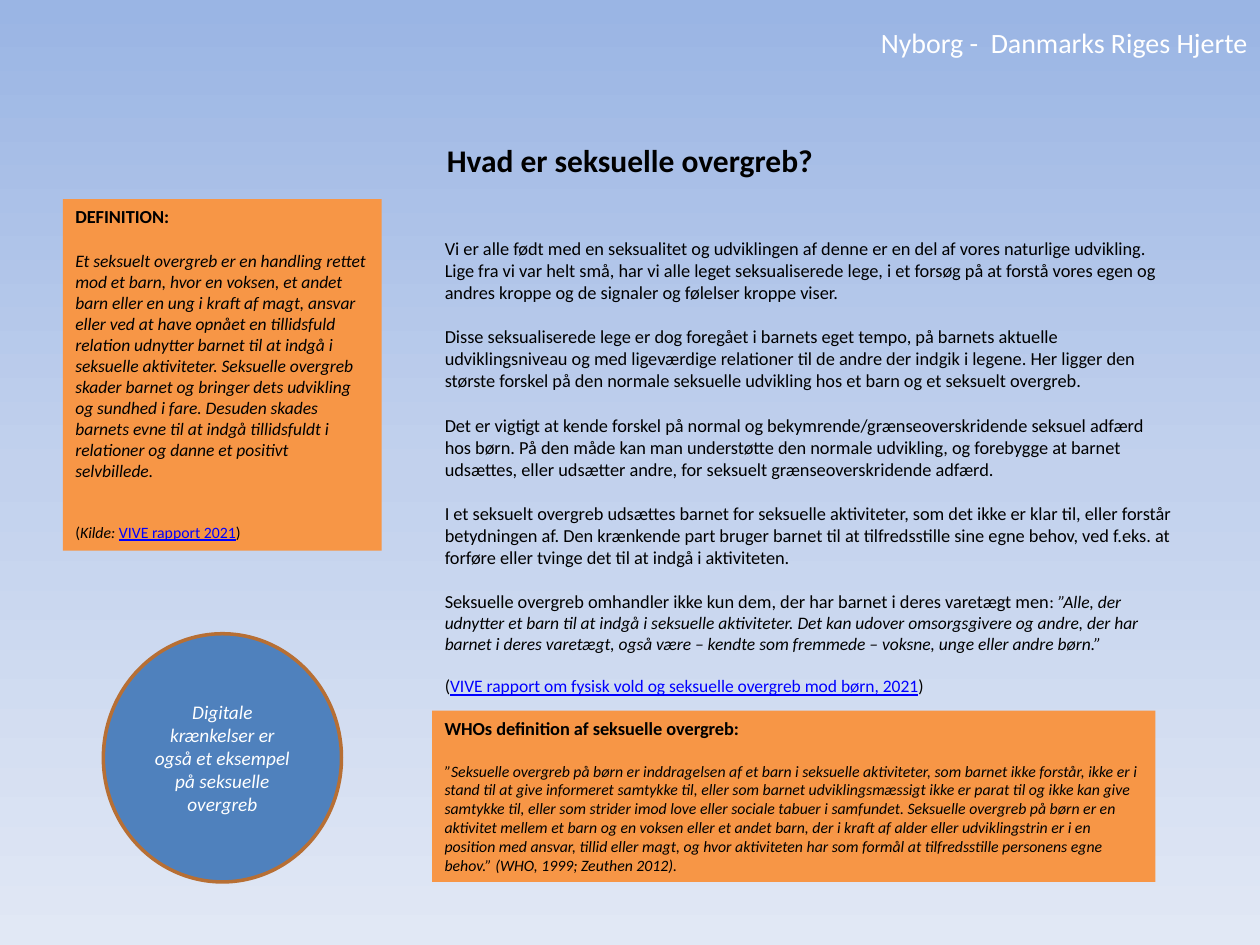
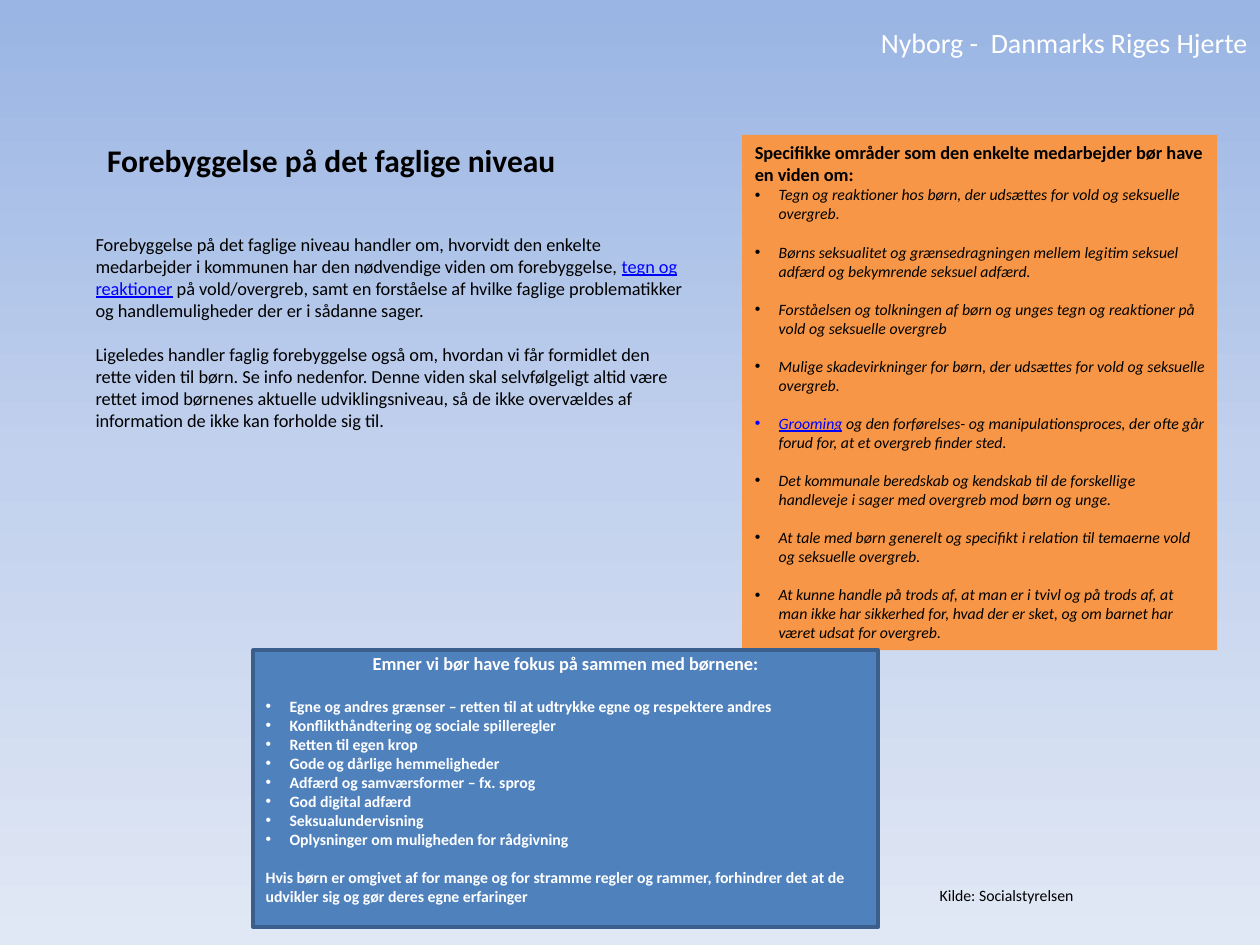
from copy import deepcopy

from pptx import Presentation
from pptx.dml.color import RGBColor
from pptx.enum.shapes import MSO_SHAPE as SHAPE
from pptx.enum.text import MSO_ANCHOR as ANCHOR, MSO_AUTO_SIZE as FIT, PP_ALIGN as ALIGN
from pptx.oxml.ns import qn
from pptx.oxml.xmlchemy import OxmlElement
from pptx.util import Inches, Pt

COLORS = {
    "sky_top": "9AB5E4", "sky_mid": "C2D1ED", "sky_low": "E1E8F5",
    "orange": "F79646", "blue": "4F81BD", "rust": "B76F34", "navy": "3A5F8C",
    "link": "0000FF", "black": "000000", "white": "FFFFFF",
}
FONT = "Calibri"
COLUMNS, ROWS = 100, 75
HEADING, TEXT, SMALL = 10.5, 10, 9
GAP = {HEADING: 12.8, TEXT: 12.2, SMALL: 11}
LINK = {"color": "link", "underline": True, "italic": False}
BULLET_INDENT = Inches(0.19)


def rgb(name):
    return RGBColor.from_string(COLORS[name])


def write(tf, *pieces, size=HEADING, color="black", bold=False, italic=False,
          underline=False, align=ALIGN.LEFT, before=0, bullet=False):
    base = {"size": size, "color": color, "bold": bold, "italic": italic,
            "underline": underline}
    p = tf.paragraphs[0]
    if p.runs:
        p = tf.add_paragraph()
    p.alignment = align
    p.space_before = Pt(before)
    pPr = p._p.get_or_add_pPr()
    indent = BULLET_INDENT if bullet else 0
    pPr.set("marL", str(indent))
    pPr.set("indent", str(-indent))
    if bullet:
        font = OxmlElement("a:buFont")
        font.set("typeface", "Arial")
        mark = OxmlElement("a:buChar")
        mark.set("char", "•")
        pPr.extend([font, mark])
    else:
        pPr.append(OxmlElement("a:buNone"))
    for piece in pieces:
        text, changes = (piece, {}) if isinstance(piece, str) else piece
        look = {**base, **changes}
        r = p.add_run()
        r.text = text
        r.font.name = FONT
        r.font.size = Pt(look["size"])
        r.font.color.rgb = rgb(look["color"])
        r.font.bold = look["bold"]
        r.font.italic = look["italic"]
        r.font.underline = look["underline"]


class Deck:
    def __init__(self):
        self.prs = Presentation()
        self.prs.slide_width, self.prs.slide_height = Inches(10), Inches(7.5)
        self.layout = self.prs.slide_layouts.get_by_name("Title and Content")
        self.s = None
        self.paint_background()

    def paint_background(self):
        master = self.prs.slide_master
        fill = master.background.fill
        fill.gradient()
        fill.gradient_angle = 270
        stops = next(master.element.iter(qn("a:gsLst")))
        stops.insert(1, deepcopy(stops[0]))
        names = ("sky_top", "sky_mid", "sky_low")
        for stop, name, position in zip(fill.gradient_stops, names, (0, 0.5, 1)):
            stop.color.rgb = rgb(name)
            stop.position = position

    def place(self, x, y, w, h):
        col, row = self.prs.slide_width / COLUMNS, self.prs.slide_height / ROWS
        return round(x * col), round(y * row), round(w * col), round(h * row)

    def slide(self):
        self.s = self.prs.slides.add_slide(self.layout)

    def frame(self, sp, anchor=ANCHOR.TOP):
        tf = sp.text_frame
        tf.word_wrap = True
        tf.auto_size = FIT.NONE
        tf.vertical_anchor = anchor
        return tf

    def text(self, *box):
        return self.frame(self.s.shapes.add_textbox(*self.place(*box)))

    def banner(self, text):
        sp = self.s.shapes.add_textbox(*self.place(0, 1.5, 100, 3.7))
        write(self.frame(sp), text, size=16, color="white", align=ALIGN.RIGHT)
        sp.element.nvSpPr.cNvPr.set("id", "99")
        self.layout.shapes.element.append(sp.element)

    def holder(self, sp, *box):
        sp.left, sp.top, sp.width, sp.height = self.place(*box)
        return self.frame(sp)

    def title(self, text, align=ALIGN.LEFT):
        tf = self.holder(self.s.shapes.title, 7.5, 10.7, 85, 5)
        write(tf, text, size=18, bold=True, align=align)

    def body(self, *box, fill=None):
        sp = self.s.placeholders[1]
        if fill:
            sp.fill.solid()
            sp.fill.fore_color.rgb = rgb(fill)
        return self.holder(sp, *box)

    def panel(self, *box, kind=SHAPE.RECTANGLE, fill="orange", line=None, anchor=ANCHOR.TOP):
        sp = self.s.shapes.add_shape(kind, *self.place(*box))
        sp.shadow.inherit = False
        sp.fill.solid()
        sp.fill.fore_color.rgb = rgb(fill)
        if line:
            sp.line.color.rgb = rgb(line)
            sp.line.width = Pt(2)
        else:
            sp.line.fill.background()
        return self.frame(sp, anchor)


def build_abuse(deck):
    deck.slide()
    deck.banner("Nyborg -  Danmarks Riges Hjerte")
    deck.title("Hvad er seksuelle overgreb?", align=ALIGN.CENTER)

    tf = deck.panel(5, 15.8, 25.3, 27.9)
    write(tf, "DEFINITION:", bold=True)
    write(tf, "Et seksuelt overgreb er en handling rettet mod et barn, hvor en voksen, et andet barn eller en ung i kraft af magt, ansvar eller ved at have opnået en tillidsfuld relation udnytter barnet til at indgå i seksuelle aktiviteter. Seksuelle overgreb skader barnet og bringer dets udvikling og sundhed i fare. Desuden skades barnets evne til at indgå tillidsfuldt i relationer og danne et positivt selvbillede.",
          size=TEXT, italic=True, before=GAP[HEADING])
    write(tf, "(", ("Kilde: ", {"italic": True}), ("VIVE rapport 2021", LINK), ")",
          size=SMALL, before=GAP[SMALL] + GAP[HEADING])

    tf = deck.body(34.3, 18.3, 59.8, 37.6)
    paragraphs = (
        "Vi er alle født med en seksualitet og udviklingen af denne er en del af vores naturlige udvikling. Lige fra vi var helt små, har vi alle leget seksualiserede lege, i et forsøg på at forstå vores egen og andres kroppe og de signaler og følelser kroppe viser.",
        "Disse seksualiserede lege er dog foregået i barnets eget tempo, på barnets aktuelle udviklingsniveau og med ligeværdige relationer til de andre der indgik i legene. Her ligger den største forskel på den normale seksuelle udvikling hos et barn og et seksuelt overgreb.",
        "Det er vigtigt at kende forskel på normal og bekymrende/grænseoverskridende seksuel adfærd hos børn. På den måde kan man understøtte den normale udvikling, og forebygge at barnet udsættes, eller udsætter andre, for seksuelt grænseoverskridende adfærd.",
        "I et seksuelt overgreb udsættes barnet for seksuelle aktiviteter, som det ikke er klar til, eller forstår betydningen af. Den krænkende part bruger barnet til at tilfredsstille sine egne behov, ved f.eks. at forføre eller tvinge det til at indgå i aktiviteten.",
    )
    for i, text in enumerate(paragraphs):
        write(tf, text, before=GAP[HEADING] if i else 0)
    write(tf, ("Seksuelle overgreb omhandler ikke kun dem, der har barnet i deres varetægt men", {"size": HEADING}), ": ",
          ("”Alle, der udnytter et barn til at indgå i seksuelle aktiviteter. Det kan udover omsorgsgivere og andre, der har barnet i deres varetægt, også være – kendte som fremmede – voksne, unge eller andre børn.”", {"italic": True}),
          size=TEXT, before=GAP[TEXT])
    write(tf, "(", ("VIVE rapport om fysisk vold og seksuelle overgreb mod børn, 2021", LINK), ")",
          size=TEXT, before=GAP[TEXT])

    tf = deck.panel(34.3, 56.4, 57.4, 13.6)
    write(tf, "WHOs definition af seksuelle overgreb:", bold=True)
    write(tf, "”Seksuelle overgreb på børn er inddragelsen af et barn i seksuelle aktiviteter, som barnet ikke forstår, ikke er i stand til at give informeret samtykke til, eller som barnet udviklingsmæssigt ikke er parat til og ikke kan give samtykke til, eller som strider imod love eller sociale tabuer i samfundet. Seksuelle overgreb på børn er en aktivitet mellem et barn og en voksen eller et andet barn, der i kraft af alder eller udviklingstrin er i en position med ansvar, tillid eller magt, og hvor aktiviteten har som formål at tilfredsstille personens egne behov.” (WHO, 1999; Zeuthen 2012).",
          size=SMALL, italic=True, before=GAP[HEADING])

    tf = deck.panel(8.2, 50.3, 18.9, 19.7, kind=SHAPE.OVAL, fill="blue", line="rust",
                    anchor=ANCHOR.MIDDLE)
    write(tf, "Digitale krænkelser er også et eksempel på seksuelle overgreb",
          size=11, color="white", italic=True, align=ALIGN.CENTER)


def build_prevention(deck):
    deck.slide()
    deck.title("Forebyggelse på det faglige niveau")

    tf = deck.text(6.6, 18, 48.9, 16.9)
    write(tf, "Forebyggelse på det faglige niveau handler om, hvorvidt den enkelte medarbejder i kommunen har den nødvendige viden om forebyggelse, ",
          ("tegn og reaktioner", LINK),
          " på vold/overgreb, samt en forståelse af hvilke faglige problematikker og handlemuligheder der er i sådanne sager.")
    write(tf, "Ligeledes handler faglig forebyggelse også om, hvordan vi får formidlet den rette viden til børn. Se info nedenfor. Denne viden skal selvfølgeligt altid være rettet imod børnenes aktuelle udviklingsniveau, så de ikke overvældes af information de ikke kan forholde sig til.",
          before=GAP[HEADING])

    tf = deck.body(58.9, 10.7, 37.7, 40.9, fill="orange")
    write(tf, "Specifikke områder som den enkelte medarbejder bør have en viden om:", bold=True)
    areas = (
        ["Tegn og reaktioner hos børn, der udsættes for vold og seksuelle overgreb."],
        ["Børns seksualitet og grænsedragningen mellem legitim seksuel adfærd og bekymrende seksuel adfærd."],
        ["Forståelsen og tolkningen af børn og unges tegn og reaktioner på vold og seksuelle overgreb"],
        ["Mulige skadevirkninger for børn, der udsættes for vold og seksuelle overgreb."],
        [("Grooming", {**LINK, "italic": True}),
         " og den forførelses- og manipulationsproces, der ofte går forud for, at et overgreb finder sted."],
        ["Det kommunale beredskab og kendskab til de forskellige handleveje i sager med overgreb mod børn og unge."],
        ["At tale med børn generelt og specifikt i relation til temaerne vold og seksuelle overgreb."],
        ["At kunne handle på trods af, at man er i tvivl og på trods af, at man ikke har sikkerhed for, hvad der er sket, og om barnet har været udsat for overgreb."],
    )
    for i, pieces in enumerate(areas):
        write(tf, *pieces, size=SMALL, italic=True, bullet=True, before=GAP[SMALL] if i else 0)

    tf = deck.panel(20.1, 51.6, 49.6, 22, fill="blue", line="navy")
    tf.margin_top = Inches(0.02)
    strong = {"color": "white", "bold": True}
    write(tf, "Emner vi bør have fokus på sammen med børnene:", align=ALIGN.CENTER, **strong)
    topics = (
        "Egne og andres grænser – retten til at udtrykke egne og respektere andres",
        "Konflikthåndtering og sociale spilleregler",
        "Retten til egen krop",
        "Gode og dårlige hemmeligheder",
        "Adfærd og samværsformer – fx. sprog",
        "God digital adfærd",
        "Seksualundervisning",
        "Oplysninger om muligheden for rådgivning",
    )
    for i, topic in enumerate(topics):
        write(tf, topic, size=SMALL, bullet=True, before=0 if i else GAP[HEADING], **strong)
    write(tf, "Hvis børn er omgivet af for mange og for stramme regler og rammer, forhindrer det at de udvikler sig og gør deres egne erfaringer",
          size=SMALL, before=GAP[SMALL], **strong)

    write(deck.text(73.6, 69.8, 20.5, 2.5), "Kilde: Socialstyrelsen", size=SMALL)


def main():
    deck = Deck()
    build_abuse(deck)
    build_prevention(deck)
    deck.prs.save("out.pptx")


if __name__ == "__main__":
    main()
